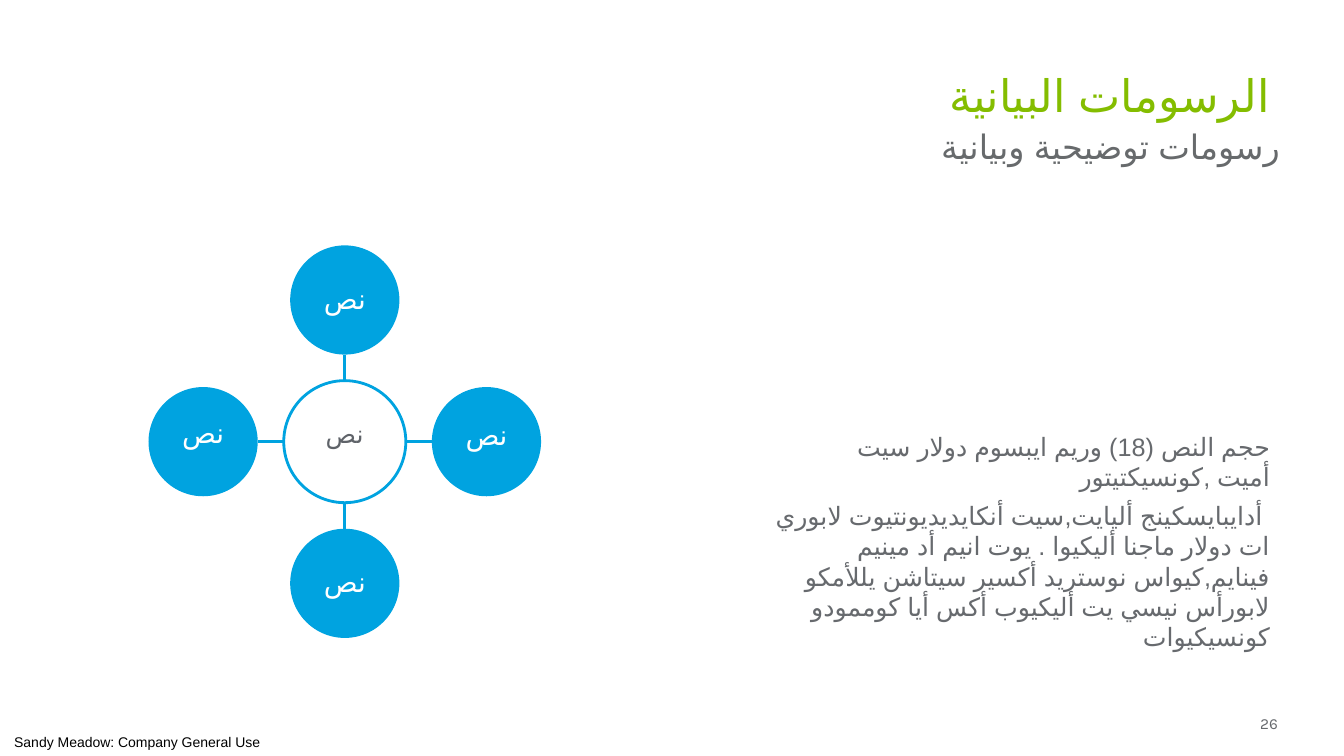
from pptx import Presentation
from pptx.dml.color import RGBColor
from pptx.enum.lang import MSO_LANGUAGE_ID as Language
from pptx.enum.shapes import MSO_CONNECTOR as Connector, MSO_SHAPE as Shape
from pptx.enum.text import MSO_ANCHOR as Anchor, MSO_AUTO_SIZE as AutoSize, PP_ALIGN as Align
from pptx.oxml.ns import qn
from pptx.util import Pt
from lxml.etree import SubElement

BLUE, GREEN, GRAY = "00A3E0", "84BD00", "676A6E"


def color(value):
    return RGBColor.from_string(value)


def write(box, lines, size, ink, align, anchor=Anchor.TOP, inset=(0, 3.6), font="Arial",
          language=Language.ARABIC, rtl=False):
    frame = box.text_frame
    frame.word_wrap = True
    frame.auto_size = AutoSize.NONE
    frame.vertical_anchor = anchor
    frame.margin_left = frame.margin_right = Pt(inset[0])
    frame.margin_top = frame.margin_bottom = Pt(inset[1])
    frame.text = "\n".join(lines)
    for number, para in enumerate(frame.paragraphs):
        para.alignment = align
        para.space_before = Pt(6 if number else 0)
        properties = para._p.get_or_add_pPr()
        properties.set("marL", "0")
        properties.set("indent", "0")
        if rtl:
            properties.set("rtl", "1")
        SubElement(properties, qn("a:buNone"))
        para.font.size = Pt(size)
        para.font.name = font
        para.font.color.rgb = color(ink)
        para.font.language_id = language
        SubElement(properties.find(qn("a:defRPr")), qn("a:cs"), typeface=font)
        for span in para.runs:
            span.font.language_id = language
    return frame


deck = Presentation()
deck.slide_width, deck.slide_height = Pt(960), Pt(540)
page = deck.slides.add_slide(deck.slide_layouts[3])
title, subtitle, body = page.placeholders

paragraphs = [
    "حجم النص (18) وريم ايبسوم\u00a0دولار سيت أميت ,كونسيكتيتور",
    " أدايبايسكينج أليايت,سيت أنكايديديونتيوت لابوري ات دولار ماجنا أليكيوا . "
    "يوت انيم أد مينيم فينايم,كيواس نوستريد أكسير سيتاشن يللأمكو لابورأس نيسي "
    "يت أليكيوب أكس أيا كوممودو كونسيكيوات ",
]
number_box = page.shapes.add_textbox(0, 0, 0, 0)
footer = page.shapes.add_textbox(0, 0, 0, 0)
for box, left, top, width, height in [
    (title, 558, 44.6, 356.4, 41),
    (subtitle, 558, 86.4, 356.4, 41),
    (body, 538.6, 304.6, 375.8, 150),
    (number_box, 884.9, 507.6, 28, 18),
    (footer, 0, 520.6, 195.8, 19.4),
]:
    box.left, box.top, box.width, box.height = Pt(left), Pt(top), Pt(width), Pt(height)

write(title, ["الرسومات البيانية"], 32, GREEN, Align.RIGHT, inset=(7.2, 3.6))
write(subtitle, ["رسومات توضيحية وبيانية"], 24, "676A6C", Align.RIGHT)
write(body, paragraphs, 18, GRAY, Align.RIGHT, inset=(7.2, 3.6), rtl=True)
write(number_box, ["26"], 11, GRAY, Align.RIGHT, Anchor.MIDDLE, font="Karla",
      language=Language.ENGLISH_US)
write(footer, ["Sandy Meadow: Company General Use"], 10, "000000", Align.CENTER, Anchor.MIDDLE,
      (0, 0), language=Language.ENGLISH_US)

center_x, center_y = 246.3, 315.5
hub_size, node_size, reach = 87.2, 78, 101.2
circles = [
    (0, 0, hub_size, 18, "5F6369", Pt(10)),
    (0, -1, node_size, 20, "FFFFFF", 0.9),
    (1, 0, node_size, 20, "FFFFFF", Pt(13)),
    (0, 1, node_size, 20, "FFFFFF", 0.9),
    (-1, 0, node_size, 20, "FFFFFF", Pt(10)),
]
for step_x, step_y, size, text_size, ink, spacing in circles:
    circle = page.shapes.add_shape(
        Shape.OVAL,
        Pt(center_x + step_x * reach - size / 2),
        Pt(center_y + step_y * reach - size / 2),
        Pt(size),
        Pt(size),
    )
    circle.shadow.inherit = False
    frame = write(circle, ["نص"], text_size, ink, Align.CENTER, Anchor.MIDDLE, (0.9, 0.9))
    frame.paragraphs[0].line_spacing = spacing
    if size == hub_size:
        circle.fill.background()
        circle.line.color.rgb = color(BLUE)
        circle.line.width = Pt(2)
        continue
    circle.fill.solid()
    circle.fill.fore_color.rgb = color(BLUE)
    circle.line.fill.background()
    start, end = hub_size / 2, reach - node_size / 2
    spoke = page.shapes.add_connector(
        Connector.STRAIGHT,
        Pt(center_x + step_x * start),
        Pt(center_y + step_y * start),
        Pt(center_x + step_x * end),
        Pt(center_y + step_y * end),
    )
    spoke.line.color.rgb = color(BLUE)
    spoke.line.width = Pt(2)
    SubElement(spoke._element.spPr, qn("a:effectLst"))

deck.save("out.pptx")
